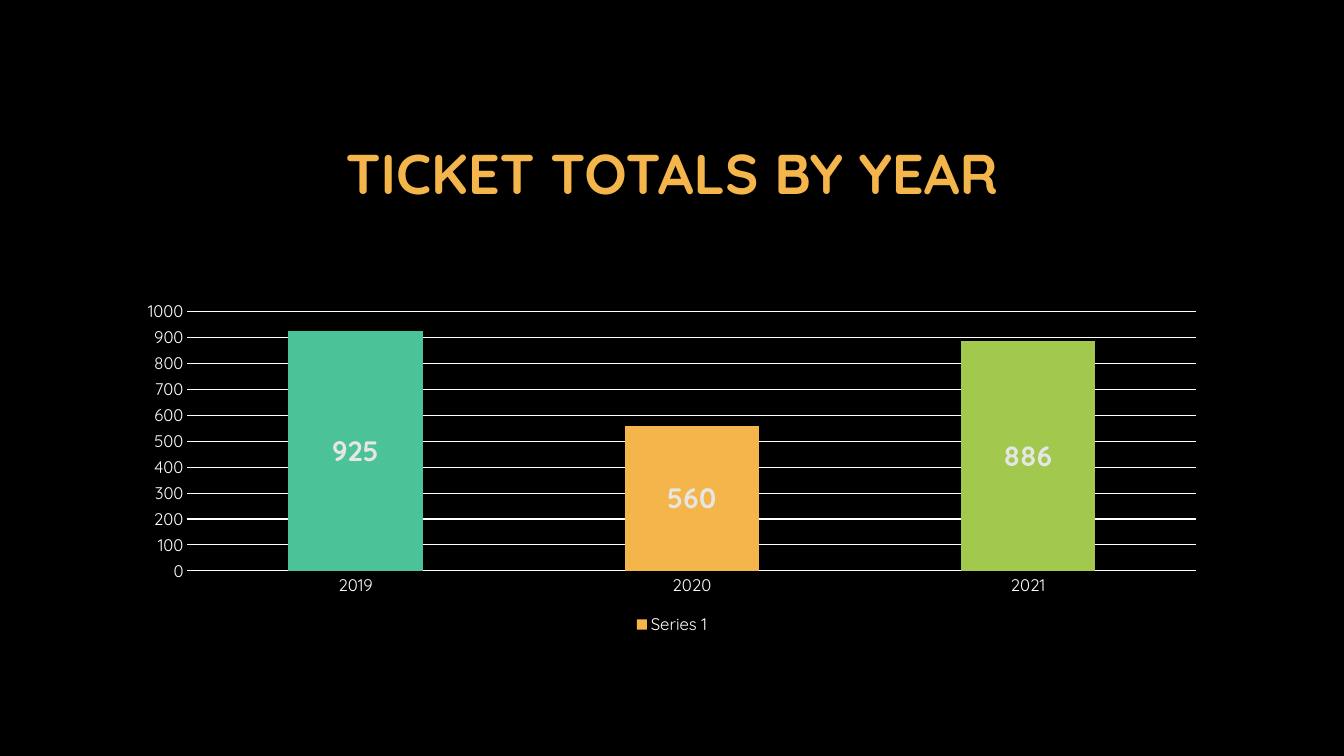
from pptx import Presentation
from pptx.chart.data import CategoryChartData
from pptx.dml.color import RGBColor as RGB
from pptx.enum.chart import (XL_CHART_TYPE as CT, XL_LABEL_POSITION as LP,
                             XL_LEGEND_POSITION as LEG, XL_TICK_MARK as TM)
from pptx.enum.text import MSO_ANCHOR, PP_ALIGN
from pptx.util import Inches, Pt

THEME = dict(font="Quicksand", back="000000", text="FFFFFF", label="E7E6E6",
             orange="F4B54B", teal="4BC298", green="A2C84E",
             title=40, value=20, axis=12, base=10)


def paint(fill, color):
    fill.solid()
    fill.fore_color.rgb = RGB.from_string(THEME[color])


def style(font, size, color, bold=False):
    for name, value in dict(name=THEME["font"], size=Pt(THEME[size]), bold=bold).items():
        setattr(font, name, value)
    font.color.rgb = RGB.from_string(THEME[color])


# Slide: title and chart share one centred column
prs = Presentation()
prs.slide_width, prs.slide_height = Inches(13.33), Inches(7.5)
W, H = prs.slide_width, prs.slide_height
s = prs.slides.add_slide(prs.slide_layouts[6])
paint(s.background.fill, "back")
left, width = Inches(1.25), W - 2 * Inches(1.25)

# Title
tf = s.shapes.add_textbox(left, Inches(0.67), width, Inches(2.08)).text_frame
tf.word_wrap = True
tf.vertical_anchor = MSO_ANCHOR.MIDDLE
p = tf.paragraphs[0]
p.alignment = PP_ALIGN.CENTER
r = p.add_run()
r.text = "TICKET TOTALS BY YEAR"
style(r.font, "title", "orange", True)

# Chart
data = CategoryChartData()
data.categories = ["2019", "2020", "2021"]
data.add_series("Series 1", [925, 560, 886])
chart = s.shapes.add_chart(CT.COLUMN_STACKED, left, Inches(2.92), width,
                           Inches(3.42), data).chart
chart.has_title = False
style(chart.font, "base", "text")

# Axes, gridlines and legend
for axis in (chart.category_axis, chart.value_axis):
    axis.major_tick_mark = axis.minor_tick_mark = TM.NONE
    axis.format.line.fill.background()
    style(axis.tick_labels.font, "axis", "text")
va = chart.value_axis
for name, value in dict(minimum_scale=0, maximum_scale=1000, major_unit=100).items():
    setattr(va, name, value)
grid = va.major_gridlines.format.line
paint(grid.fill, "text")
grid.width = Pt(0.75)
chart.has_legend = True
chart.legend.position = LEG.BOTTOM
chart.legend.include_in_layout = False
style(chart.legend.font, "axis", "text")

# Columns, one colour per year, with centred values
plot = chart.plots[0]
plot.gap_width, plot.overlap, plot.vary_by_categories = 150, 100, False
series = plot.series[0]
paint(series.format.fill, "orange")
for i, color in {0: "teal", 2: "green"}.items():
    paint(series.points[i].format.fill, color)
labels = series.data_labels
labels.show_value = True
labels.position = LP.CENTER
style(labels.font, "value", "label", True)

prs.save("out.pptx")
